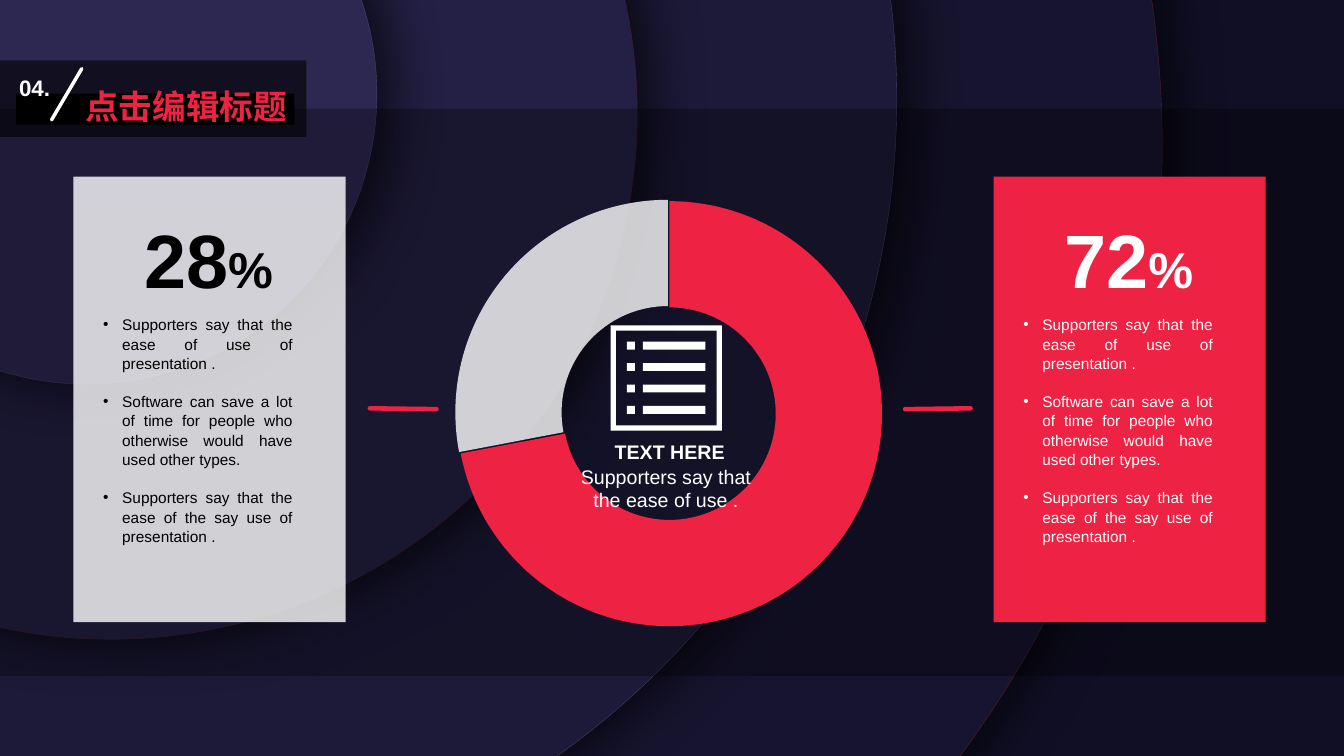
"""Builds a dark slide with a 72/28 doughnut chart between two bulleted panels."""
from lxml import etree
from pptx import Presentation
from pptx.chart.data import CategoryChartData
from pptx.dml.color import RGBColor
from pptx.enum.chart import XL_CHART_TYPE
from pptx.enum.shapes import MSO_CONNECTOR, MSO_SHAPE
from pptx.enum.text import MSO_AUTO_SIZE, PP_ALIGN
from pptx.oxml import parse_xml
from pptx.oxml.ns import nsdecls, qn
from pptx.util import Cm, Pt

RECT, OVAL = MSO_SHAPE.RECTANGLE, MSO_SHAPE.OVAL
STRAIGHT = MSO_CONNECTOR.STRAIGHT
DOUGHNUT = XL_CHART_TYPE.DOUGHNUT
LEFT, CENTER, JUSTIFY = PP_ALIGN.LEFT, PP_ALIGN.CENTER, PP_ALIGN.JUSTIFY
GROW = MSO_AUTO_SIZE.SHAPE_TO_FIT_TEXT
FONT = "Arial"
COLORS = {
    "back": "110F25", "black": "000000", "white": "FFFFFF", "red": "EE2243",
    "disc1": "17142F", "disc2": "1D1A39", "disc3": "242045", "disc4": "2D2851",
    "rim1": "581F36", "rim2": "424266", "rim3": "511A33", "rim4": "48476C",
}
RGB = {name: RGBColor.from_string(value) for name, value in COLORS.items()}
POINTS = "\n".join([
    "Supporters say that the ease of use of presentation .",
    "Software can save a lot of time for people who otherwise would have used other types.",
    "Supporters say that the ease of the say use of presentation .",
])

prs = Presentation()
prs.slide_width, prs.slide_height = Cm(33.87), Cm(19.05)
s = prs.slides.add_slide(prs.slide_layouts[6])
s.background.fill.solid()
s.background.fill.fore_color.rgb = RGB["back"]


def add_block(kind, box, color, alpha=100):
    sp = s.shapes.add_shape(kind, *[Cm(v) for v in box])
    sp.shadow.inherit = False
    sp.fill.solid()
    sp.fill.fore_color.rgb = RGB[color]
    sp.line.fill.background()
    if alpha < 100:
        clr = next(sp._element.iter(qn("a:srgbClr")))
        etree.SubElement(clr, qn("a:alpha"), val=str(alpha * 1000))
    return sp


def add_text(box, text, size, color, bold=False, align=LEFT, wrap=True):
    tf = s.shapes.add_textbox(*[Cm(v) for v in box]).text_frame
    tf.text = text
    tf.word_wrap = wrap
    tf.auto_size = GROW
    for p in tf.paragraphs:
        p.alignment = align
        for r in p.runs:
            r.font.name, r.font.size, r.font.bold = FONT, Pt(size), bold
            r.font.color.rgb = RGB[color]
    return tf


discs = [(-22.17, -22.05, 51.46), (-17.96, -17.78, 40.56),
         (-10.46, -10.41, 26.52), (-5.13, -4.95, 14.63)]
for n, (x, y, size) in enumerate(discs, 1):
    disc = add_block(OVAL, (x, y, size, size), f"disc{n}")
    disc.line.color.rgb = RGB[f"rim{n}"]
    disc.line.width = Pt(0.25)
    disc._element.spPr.find(qn("a:effectLst")).append(parse_xml(
        f'<a:outerShdw {nsdecls("a")} blurRad="{Pt(39)}" dist="{Pt(10)}" dir="300000" '
        'algn="ctr" rotWithShape="0"><a:srgbClr val="000000"><a:alpha val="70000"/>'
        '</a:srgbClr></a:outerShdw>'))
add_block(RECT, (0, 2.74, 33.87, 14.3), "black", 30)

data = CategoryChartData()
data.categories = ["1", "2"]
data.add_series("Series 1", (72, 28))
chart = s.shapes.add_chart(DOUGHNUT, Cm(10.95), Cm(4.27), Cm(11.58), Cm(12.07), data).chart
chart.has_legend = chart.has_title = False
chart.font.name, chart.font.size = FONT, Pt(10)
chart.font.color.rgb = RGB["black"]
plot = chart.plots[0]
plot.vary_by_categories = False
series = plot.series[0]
for i, color in enumerate(["red", "white"]):
    fmt = series.points[i].format
    fmt.fill.solid()
    fmt.fill.fore_color.rgb = RGB[color]
    fmt.line.fill.background()
small_slice = series._element.findall(qn("c:dPt"))[1]
etree.SubElement(next(small_slice.iter(qn("a:srgbClr"))), qn("a:alpha"), val="80000")
small_slice.find(qn("c:spPr")).addprevious(
    parse_xml(f'<c:explosion {nsdecls("c")} val="2"/>'))
ring = series._element.getparent()
ring.find(qn("c:holeSize")).set("val", "75")
area = ring.getparent()
for old in area.findall(qn("c:layout")):
    area.remove(old)
area.insert(0, parse_xml(
    f'<c:layout {nsdecls("c")}><c:manualLayout><c:layoutTarget val="inner"/>'
    '<c:xMode val="edge"/><c:yMode val="edge"/><c:x val="0.049"/><c:y val="0.066"/>'
    '<c:w val="0.925"/><c:h val="0.888"/></c:manualLayout></c:layout>'))

icon_boxes = [(15.39, 8.2, 18.19, 10.85), (15.52, 8.33, 18.06, 10.72)]
for row in range(4):
    top = 8.61 + 0.54 * row
    icon_boxes += [(15.8, top, 16, top + 0.2), (16.2, top, 17.78, top + 0.2)]
icon = s.shapes.build_freeform(Cm(15.39), Cm(8.2))
for n, (x1, y1, x2, y2) in enumerate(icon_boxes):
    if n:
        icon.move_to(Cm(x1), Cm(y1))
    icon.add_line_segments([(Cm(x), Cm(y)) for x, y in [(x1, y2), (x2, y2), (x2, y1)]])
sp = icon.convert_to_shape()
sp.shadow.inherit = False
sp.fill.solid()
sp.fill.fore_color.rgb = RGB["white"]
sp.line.fill.background()

add_text((15.24, 10.97, 3.3, 0.86), "TEXT HERE", 14, "white", bold=True, wrap=False)
add_text((14.12, 11.58, 5.33, 1.45), "Supporters say that the ease of use .", 14, "white",
         align=CENTER)

panels = [(25.04, "72", "red", 100, "white"), (1.85, "28", "white", 80, "black")]
for x, number, fill, alpha, ink in panels:
    add_block(RECT, (x, 4.45, 6.86, 11.23), fill, alpha)
    tf = add_text((x + 1.53, 5.23, 3.84, 2.57), number, 54, ink, bold=True, wrap=False)
    r = tf.paragraphs[0].add_run()
    r.text = "%"
    r.font.name, r.font.size, r.font.bold = FONT, Pt(36), True
    r.font.color.rgb = RGB[ink]
    tf = add_text((x + 0.5, 7.8, 5.28, 6.38), POINTS, 11, ink, align=JUSTIFY)
    for p in tf.paragraphs:
        p.line_spacing = 1.05
        p.space_after = Pt(13.2)
        pPr = p._p.get_or_add_pPr()
        pPr.set("marL", str(Cm(0.48)))
        pPr.set("indent", str(Cm(-0.48)))
        etree.SubElement(pPr, qn("a:buFont"), typeface=FONT)
        etree.SubElement(pPr, qn("a:buChar"), char="•")
    tf.paragraphs[-1].space_after = Pt(0)

add_block(RECT, (0, 1.52, 7.72, 1.93), "black", 60)
add_block(RECT, (0.41, 2.36, 7.01, 0.79), "black")
title = add_text((1.9, 1.83, 6.17, 1.37), "点击编辑标题", 24, "red", bold=True)
title.paragraphs[0].line_spacing = 1.2
add_text((0.23, 1.75, 1.57, 0.94), "04.", 16, "white", bold=True)

lines = [(1.3, 3.02, 2.06, 1.73, "white", 2.5),
         (24.46, 10.29, 22.81, 10.31, "red", 3.25),
         (9.32, 10.29, 11, 10.31, "red", 3.25)]
for x1, y1, x2, y2, color, width in lines:
    line = s.shapes.add_connector(STRAIGHT, Cm(x1), Cm(y1), Cm(x2), Cm(y2))
    line.line.color.rgb = RGB[color]
    line.line.width = Pt(width)
    spPr = line._element.spPr
    spPr.find(qn("a:ln")).set("cap", "rnd")
    etree.SubElement(spPr, qn("a:effectLst"))

prs.save("out.pptx")
